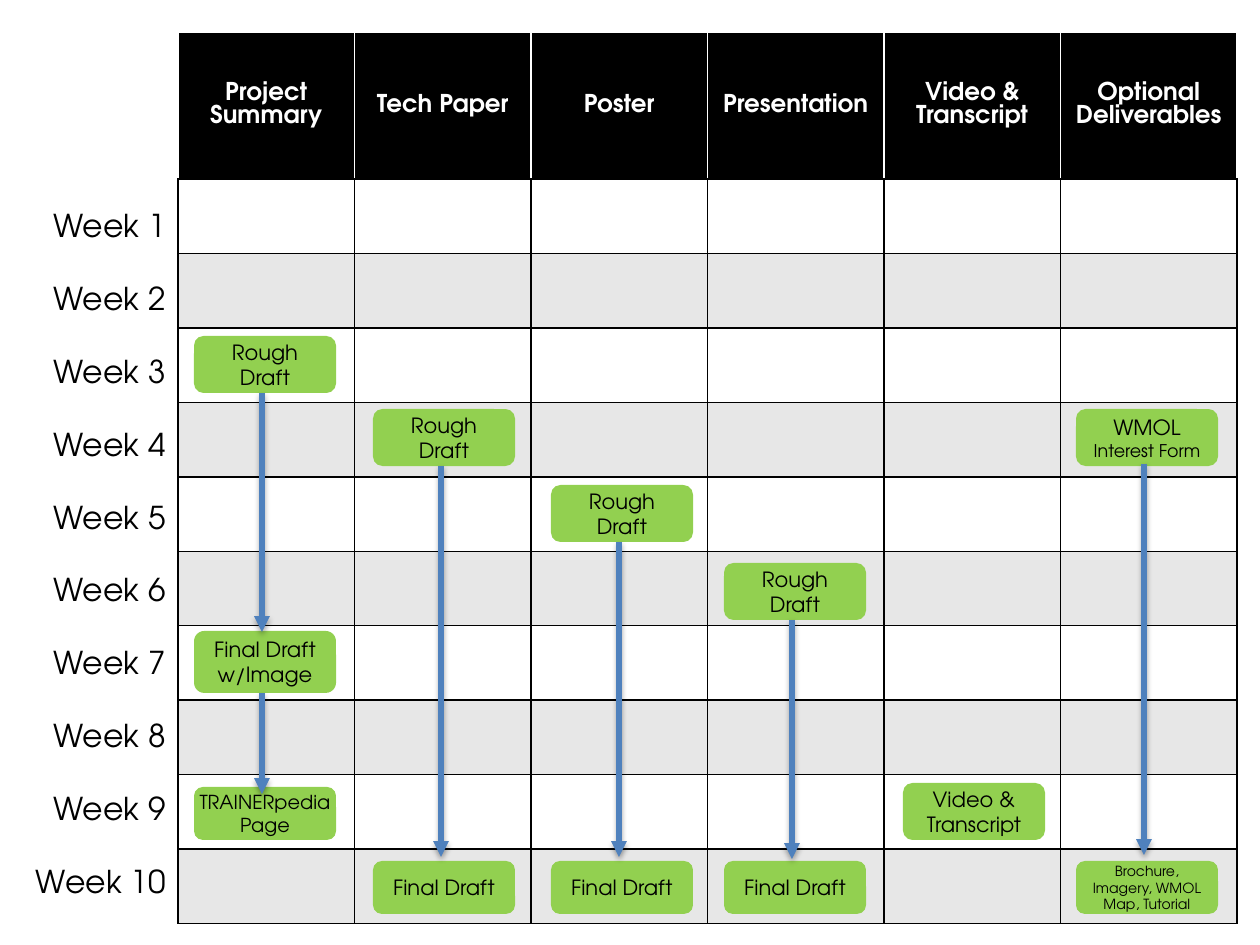
from lxml import etree
from pptx import Presentation
from pptx import util as u
from pptx.dml.color import RGBColor
from pptx.enum import shapes, text
from pptx.oxml import ns, parse_xml

FONT = "TeX Gyre Adventor"
BLACK = RGBColor(0, 0, 0)
WHITE = RGBColor(255, 255, 255)
GRAY = RGBColor(0xE7, 0xE7, 0xE7)
GREEN = RGBColor(0x92, 0xD0, 0x50)
BLUE = RGBColor(0x4F, 0x81, 0xBD)

HEADS = ["Project Summary", "Tech Paper", "Poster", "Presentation",
         "Video & Transcript", "Optional Deliverables"]
WEEKS = 10
LEFTS = [194, 373, 551, 724, 903, 1076]
CARD = 142
ROUGH = [("Rough Draft", 12)]
FINAL = [("Final Draft", 12)]

CARDS = [
    (0, 631, 62, [("Final Draft w/Image", 12)]),
    (0, 336, 57, ROUGH),
    (1, 861, 53, FINAL),
    (1, 409, 57, ROUGH),
    (2, 861, 53, FINAL),
    (2, 485, 57, ROUGH),
    (3, 861, 53, FINAL),
    (3, 563, 57, ROUGH),
    (0, 787, 53, [("TRAINERpedia Page", 11)]),
    (4, 783, 57, [("Video & Transcript", 12)]),
    (5, 861, 53, [("Brochure, Imagery, WMOL Map, Tutorial", 8)]),
    (5, 409, 57, [("WMOL ", 12), ("Interest Form", 10)]),
]
ARROWS = [(0, 393, 632), (1, 466, 857), (2, 542, 857),
          (3, 620, 859), (0, 693, 794), (5, 464, 855)]

SHADOW = (
    f'<a:effectLst {ns.nsdecls("a")}>'
    '<a:outerShdw blurRad="40000" dist="23000" dir="5400000" rotWithShape="0">'
    '<a:srgbClr val="000000"><a:alpha val="35000"/></a:srgbClr>'
    '</a:outerShdw></a:effectLst>'
)


def px(n):
    return u.Emu(n * 914400 // 126)


def style(run, size, color=BLACK, bold=False):
    run.font.name = FONT
    run.font.size = u.Pt(size)
    run.font.color.rgb = color
    run.font.bold = bold


def edge(cell, side, color):
    line = etree.SubElement(cell._tc.get_or_add_tcPr(), ns.qn(f"a:ln{side}"), w="12700")
    fill = etree.SubElement(line, ns.qn("a:solidFill"))
    etree.SubElement(fill, ns.qn("a:srgbClr"), val=str(color))


def paint(cell, fill, sides):
    for side, color in zip("LRTB", sides):
        edge(cell, side, color)
    cell.fill.solid()
    cell.fill.fore_color.rgb = fill


def add_grid(slide):
    cols = len(HEADS)
    frame = slide.shapes.add_table(WEEKS + 1, cols, px(178), px(32), px(1059), px(892))
    table = frame.table
    for col in table.columns:
        col.width = px(1059) // cols
    table.rows[0].height = px(147)
    for week in range(1, WEEKS + 1):
        table.rows[week].height = px(745) // WEEKS
        for col in range(cols):
            paint(table.cell(week, col), WHITE if week % 2 else GRAY, [BLACK] * 4)
    for col, head in enumerate(HEADS):
        cell = table.cell(0, col)
        paint(cell, BLACK, [WHITE, WHITE, WHITE, BLACK])
        cell.vertical_anchor = text.MSO_ANCHOR.MIDDLE
        para = cell.text_frame.paragraphs[0]
        para.text = head
        para.alignment = text.PP_ALIGN.CENTER
        style(para.runs[0], 14, WHITE, True)


def add_weeks(slide):
    frame = slide.shapes.add_textbox(px(20), px(200), px(158), px(712)).text_frame
    frame.word_wrap = False
    frame.auto_size = text.MSO_AUTO_SIZE.SHAPE_TO_FIT_TEXT
    frame.text = "\n".join(f"Week {n}" for n in range(1, WEEKS + 1))
    for para in frame.paragraphs:
        para.alignment = text.PP_ALIGN.RIGHT
        para.space_after = u.Pt(20)
        style(para.runs[0], 18)


def add_card(slide, col, top, height, parts):
    card = slide.shapes.add_shape(shapes.MSO_SHAPE.ROUNDED_RECTANGLE,
                                  px(LEFTS[col]), px(top), px(CARD), px(height))
    card.shadow.inherit = False
    card.fill.solid()
    card.fill.fore_color.rgb = GREEN
    card.line.fill.background()
    frame = card.text_frame
    frame.word_wrap = True
    frame.vertical_anchor = text.MSO_ANCHOR.MIDDLE
    if parts[0][1] == 11:
        frame.margin_left = frame.margin_right = 0
    para = frame.paragraphs[0]
    para.alignment = text.PP_ALIGN.CENTER
    for words, size in parts:
        run = para.add_run()
        run.text = words
        style(run, size)


def add_arrow(slide, col, start, end):
    mid = px(LEFTS[col] + 68)
    arrow = slide.shapes.add_connector(shapes.MSO_CONNECTOR.STRAIGHT,
                                       mid, px(start), mid, px(end))
    arrow.line.color.rgb = BLUE
    arrow.line.width = u.Pt(3)
    etree.SubElement(arrow.line._get_or_add_ln(), ns.qn("a:tailEnd"), type="triangle")
    arrow._element.spPr.append(parse_xml(SHADOW))


def main():
    deck = Presentation()
    deck.slide_width = px(1260)
    deck.slide_height = px(945)
    slide = deck.slides.add_slide(deck.slide_layouts[6])
    add_grid(slide)
    add_weeks(slide)
    for card in CARDS:
        add_card(slide, *card)
    for arrow in ARROWS:
        add_arrow(slide, *arrow)
    deck.save("out.pptx")


if __name__ == "__main__":
    main()
